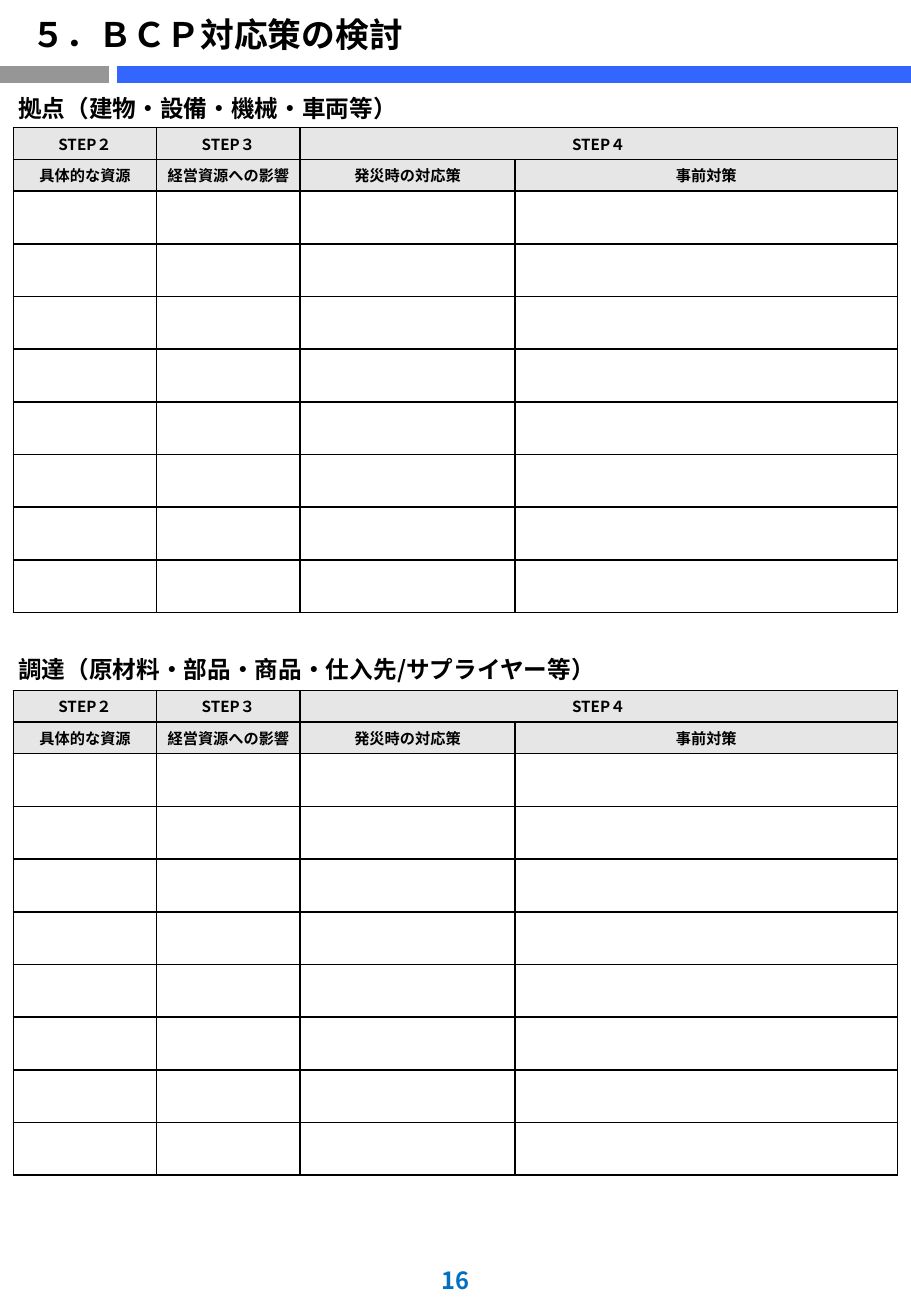
from lxml import etree
from pptx import Presentation
from pptx.dml.color import RGBColor
from pptx.enum.shapes import MSO_CONNECTOR
from pptx.enum.text import MSO_ANCHOR, PP_ALIGN
from pptx.oxml.ns import qn
from pptx.util import Inches, Pt

STRAIGHT = MSO_CONNECTOR.STRAIGHT
BOTTOM, MIDDLE = MSO_ANCHOR.BOTTOM, MSO_ANCHOR.MIDDLE
LEFT, CENTER = PP_ALIGN.LEFT, PP_ALIGN.CENTER
SANS = "Noto Sans CJK JP"
COLORS = {"black": "000000", "gray": "969696", "blue": "3366FF",
          "head": "E7E6E6", "page": "0070C0"}
COLS = [1.18, 1.18, 1.77, 3.15]
HEADS = [["STEP２", "STEP３", "STEP４", ""],
         ["具体的な資源", "経営資源への影響", "発災時の対応策", "事前対策"]]
PARTS = [("拠点（建物・設備・機械・車両等）", "Arial", 0.35),
         ("調達（原材料・部品・商品・仕入先/サプライヤー等）", SANS, 0.64)]
BLANKS = 8
HEAD_H = 0.26
BODY_H = 3.47 / BLANKS
SIZE = len(HEADS) + BLANKS + 1


def rgb(name):
    return RGBColor.from_string(COLORS[name])


def write(frame, text, size, align=LEFT, color="black", font=SANS):
    frame.text = text
    para = frame.paragraphs[0]
    para.alignment = align
    for run in para.runs:
        run.font.size = Pt(size)
        run.font.bold = True
        run.font.name = font
        run.font.color.rgb = rgb(color)
        east = etree.SubElement(run.font._element, qn("a:ea"))
        east.set("typeface", font)


def add_text(slide, box, text, size, align, color):
    frame = slide.shapes.add_textbox(*map(Inches, box)).text_frame
    frame.word_wrap = True
    frame.vertical_anchor = BOTTOM
    write(frame, text, size, align, color)


def add_bar(slide, start, end, color):
    y = Inches(0.61)
    bar = slide.shapes.add_connector(STRAIGHT, Inches(start), y, Inches(end), y)
    bar.line.width = Pt(10)
    bar.line.color.rgb = rgb(color)
    etree.SubElement(bar._element.spPr, qn("a:effectLst"))


def set_edges(cell, shown):
    props = cell._tc.get_or_add_tcPr()
    for side in "LRTB":
        line = etree.SubElement(props, qn("a:ln" + side), w=str(Pt(1)))
        if side in shown:
            fill = etree.SubElement(line, qn("a:solidFill"))
            etree.SubElement(fill, qn("a:srgbClr"), val=COLORS["black"])
        else:
            etree.SubElement(line, qn("a:noFill"))


def style_cell(cell, edges, anchor, fill=None):
    cell.margin_left = cell.margin_right = Inches(0.04)
    cell.margin_top = cell.margin_bottom = Inches(0.04)
    cell.vertical_anchor = anchor
    set_edges(cell, edges)
    if fill:
        cell.fill.solid()
        cell.fill.fore_color.rgb = rgb(fill)
    else:
        cell.fill.background()


def fill_part(table, top, title, font, height):
    edges = "TB" if top else "B"
    table.rows[top].height = Inches(height)
    for col in range(len(COLS)):
        style_cell(table.cell(top, col), edges, BOTTOM)
    table.cell(top, 0).merge(table.cell(top, len(COLS) - 1))
    write(table.cell(top, 0).text_frame, title, 14, font=font)

    for row, labels in enumerate(HEADS, top + 1):
        table.rows[row].height = Inches(HEAD_H)
        for col, label in enumerate(labels):
            cell = table.cell(row, col)
            style_cell(cell, "LRTB", MIDDLE, "head")
            write(cell.text_frame, label, 9, CENTER)
    table.cell(top + 1, 2).merge(table.cell(top + 1, 3))

    for row in range(top + len(HEADS) + 1, top + SIZE):
        table.rows[row].height = Inches(BODY_H)
        for col in range(len(COLS)):
            style_cell(table.cell(row, col), "LRTB", MIDDLE)


def add_grid(slide):
    box = map(Inches, (0.11, 0.7, sum(COLS), 8.97))
    table = slide.shapes.add_table(SIZE * len(PARTS), len(COLS), *box).table
    table.first_row = table.horz_banding = False
    for col, width in zip(table.columns, COLS):
        col.width = Inches(width)
    for i, part in enumerate(PARTS):
        fill_part(table, i * SIZE, *part)


def main():
    deck = Presentation()
    deck.slide_width, deck.slide_height = Inches(7.5), Inches(10.83)
    slide = deck.slides.add_slide(deck.slide_layouts[6])
    add_bar(slide, 0, 0.9, "gray")
    add_bar(slide, 0.96, 7.5, "blue")
    add_grid(slide)
    add_text(slide, (0.16, 0.04, 7.17, 0.46), "５．ＢＣＰ対応策の検討",
             20, LEFT, "black")
    add_text(slide, (0, 10.3, 7.5, 0.4), "16", 14, CENTER, "page")
    deck.save("out.pptx")


if __name__ == "__main__":
    main()
